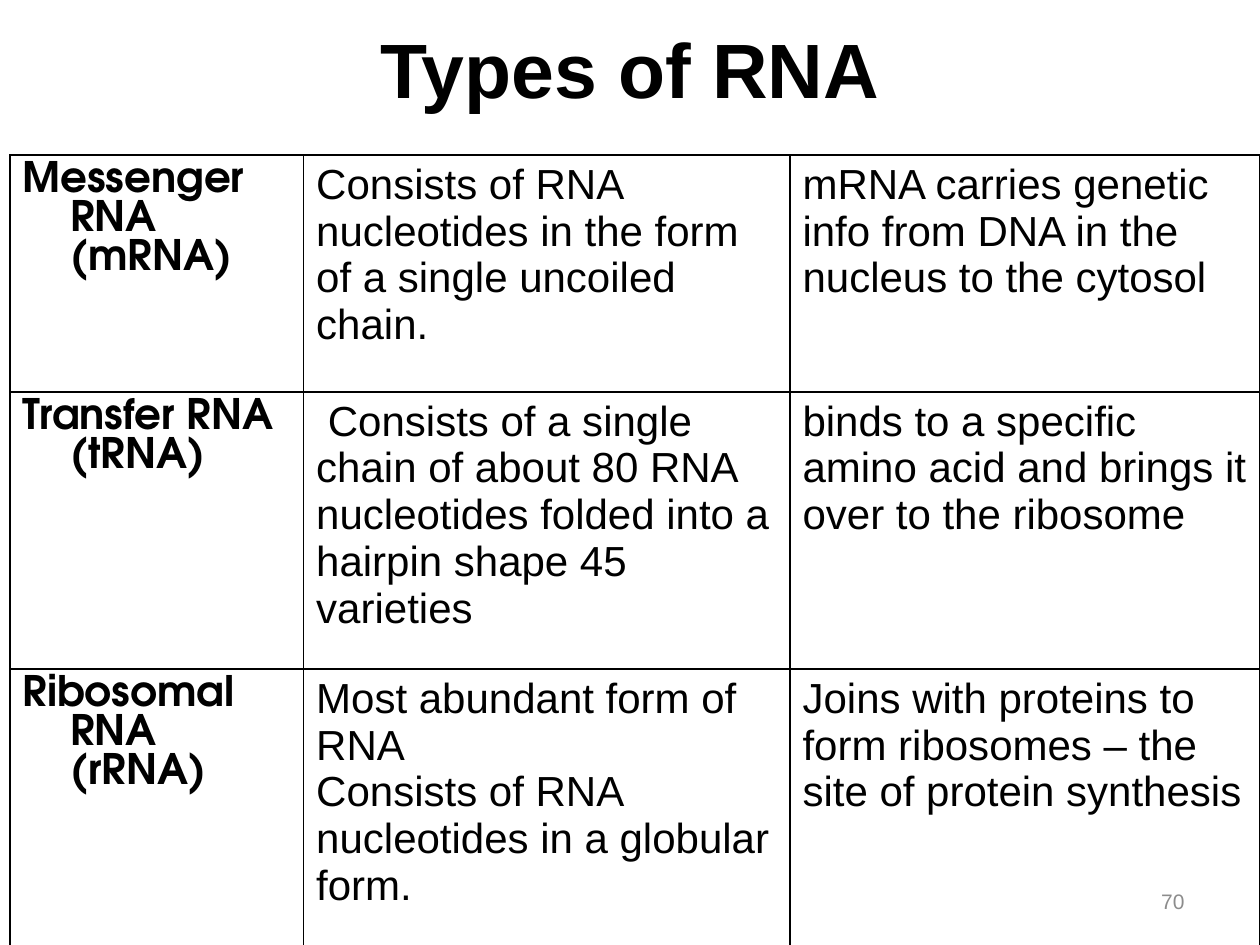
from lxml import etree
from pptx import Presentation
from pptx.dml.color import RGBColor
from pptx.enum.text import MSO_ANCHOR, PP_ALIGN
from pptx.oxml.ns import qn
from pptx.util import Inches, Pt

LEFT, CENTER, RIGHT = PP_ALIGN.LEFT, PP_ALIGN.CENTER, PP_ALIGN.RIGHT
MIDDLE = MSO_ANCHOR.MIDDLE
BLACK = RGBColor(0x00, 0x00, 0x00)
GRAY = RGBColor(0x8C, 0x8C, 0x8C)
BODY_FONT = "Arial"
NAME_FONT = "TeX Gyre Adventor"
HANGING = 0.38

COLUMN_WIDTHS = (2.33, 3.86, 3.73)
ROW_HEIGHTS = (1.88, 2.2, 2.2)
RNA_TYPES = (
    (
        "Messenger RNA (mRNA)",
        "Consists of RNA nucleotides in the form of a single uncoiled chain.",
        "mRNA carries genetic info from DNA in the nucleus to the cytosol",
    ),
    (
        "Transfer RNA (tRNA)",
        " Consists of a single chain of about 80 RNA nucleotides "
        "folded into a hairpin shape 45 varieties",
        "binds to a specific amino acid and brings it over to the ribosome",
    ),
    (
        "Ribosomal RNA (rRNA)",
        "Most abundant form of RNA\n"
        "Consists of RNA nucleotides in a globular form.",
        "Joins with proteins to form ribosomes – the site of protein synthesis",
    ),
)


def write(frame, text, size=24, font=BODY_FONT, color=BLACK, bold=False,
          align=LEFT, hanging=0):
    frame.word_wrap = True
    frame.text = text
    for paragraph in frame.paragraphs:
        if hanging:
            properties = paragraph._p.get_or_add_pPr()
            properties.set("marL", str(Inches(hanging)))
            properties.set("indent", str(-Inches(hanging)))
        paragraph.alignment = align
        paragraph.font.size = Pt(size)
        paragraph.font.name = font
        paragraph.font.bold = bold
        paragraph.font.color.rgb = color


class RnaSlide:
    def __init__(self, slide, border_color=BLACK, border_width=1):
        self.slide = slide
        self.border_color = border_color
        self.border_width = border_width

    def text(self, text, left, top, width, height, **style):
        box = self.slide.shapes.add_textbox(
            Inches(left), Inches(top), Inches(width), Inches(height))
        box.text_frame.vertical_anchor = MIDDLE
        write(box.text_frame, text, **style)

    def border(self, cell):
        properties = cell._tc.get_or_add_tcPr()
        for position, side in enumerate(("lnL", "lnR", "lnT", "lnB")):
            line = etree.Element(qn(f"a:{side}"), w=str(Pt(self.border_width)))
            fill = etree.SubElement(line, qn("a:solidFill"))
            etree.SubElement(fill, qn("a:srgbClr"), val=str(self.border_color))
            properties.insert(position, line)

    def table(self, rows, left, top, widths, heights):
        table = self.slide.shapes.add_table(
            len(rows), len(widths), Inches(left), Inches(top),
            Inches(sum(widths)), Inches(sum(heights))).table
        table.first_row = table.horz_banding = False
        for column, width in zip(table.columns, widths):
            column.width = Inches(width)
        for row, height, texts in zip(table.rows, heights, rows):
            row.height = Inches(height)
            for index, (cell, text) in enumerate(zip(row.cells, texts)):
                style = {} if index else {
                    "font": NAME_FONT, "bold": True, "hanging": HANGING}
                cell.fill.background()
                write(cell.text_frame, text, **style)
                self.border(cell)


def main():
    presentation = Presentation()
    presentation.slide_width = Inches(10)
    presentation.slide_height = Inches(7.5)
    blank = presentation.slide_layouts[6]
    rna = RnaSlide(presentation.slides.add_slide(blank))
    rna.text("Types of RNA", 0, 0, 10, 1.07, size=44, bold=True, align=CENTER)
    rna.table(RNA_TYPES, 0.08, 1.23, COLUMN_WIDTHS, ROW_HEIGHTS)
    rna.text("70", 7.17, 6.95, 2.33, 0.4, size=12, color=GRAY, align=RIGHT)
    presentation.save("out.pptx")


if __name__ == "__main__":
    main()
